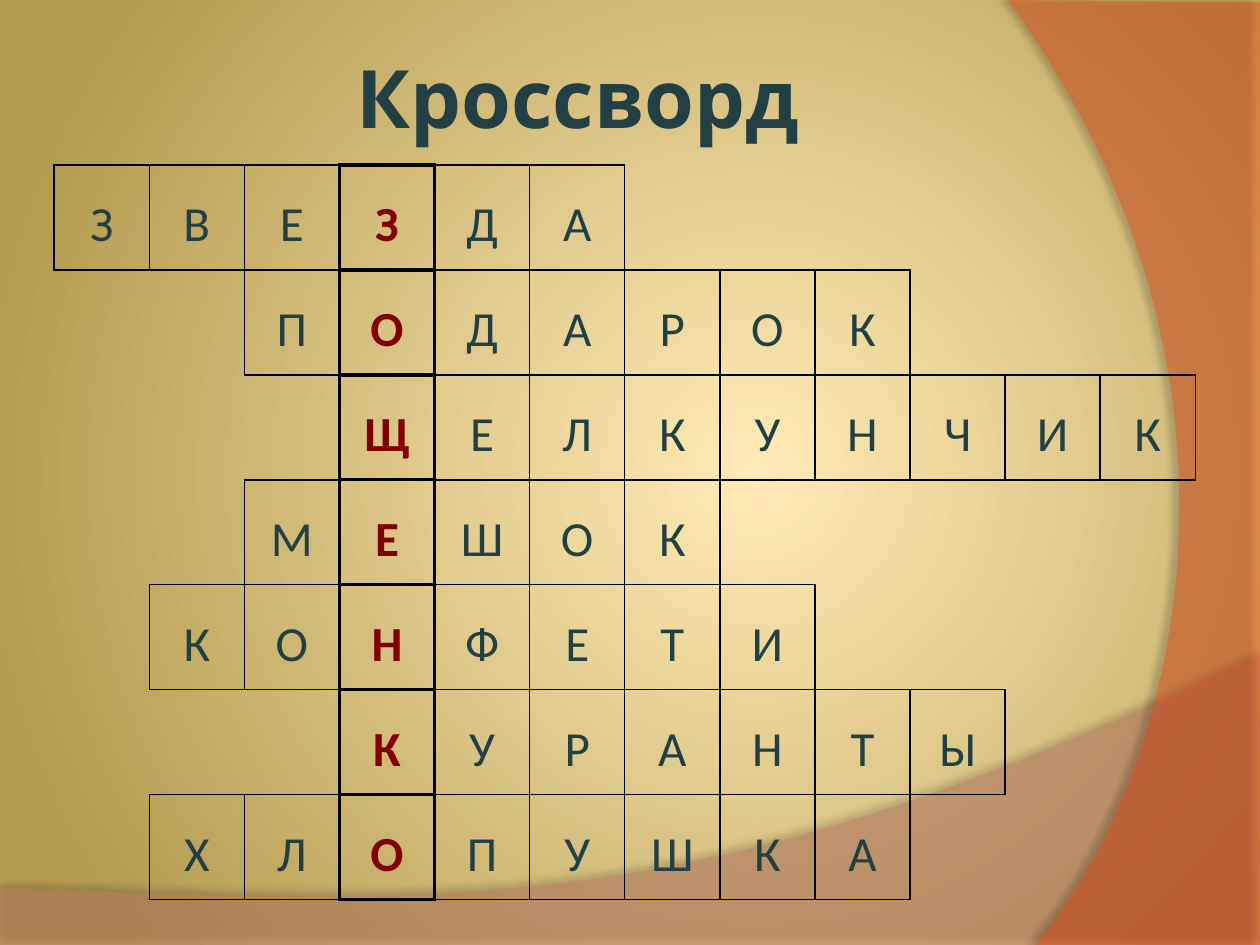
from lxml import etree
from pptx import Presentation
from pptx.dml.color import RGBColor
from pptx.enum.text import MSO_ANCHOR, PP_ALIGN
from pptx.oxml.ns import qn
from pptx.util import Inches, Pt

MIDDLE, TOP = MSO_ANCHOR.MIDDLE, MSO_ANCHOR.TOP
CENTER = PP_ALIGN.CENTER

INK = RGBColor(0x22, 0x40, 0x43)
KEY_RED = RGBColor(0x80, 0x00, 0x00)
BLACK = RGBColor(0x00, 0x00, 0x00)
CREAM = RGBColor(0xFF, 0xEB, 0xB6)
OCHRE = RGBColor(0xB3, 0x9A, 0x4F)
CLAY = RGBColor(0xC7, 0x7E, 0x69)
ORANGE = RGBColor(0xF4, 0x48, 0x0F)

TITLE = "Кроссворд"
# Each word with the index of its letter in the key column
WORDS = [("ЗВЕЗДА", 3), ("ПОДАРОК", 1), ("ЩЕЛКУНЧИК", 0), ("МЕШОК", 1),
         ("КОНФЕТИ", 2), ("КУРАНТЫ", 0), ("ХЛОПУШКА", 2)]
KEY_COLUMN, COLUMNS = 3, 12
GRID = (0.43, 1.31, 9.06, 5.83)
THIN, THICK = 1, 2.25
SIDES = [("lnL", 0, -1), ("lnR", 0, 1), ("lnT", -1, 0), ("lnB", 1, 0)]

# Outline steps: a point is a line, four points are a Bezier curve
BANDS = [
    dict(color=CLAY, alpha=45, shadow=(35, 4, 3.5, 270),
         steps=[(0, 7.05), (0, 7.5), (10, 7.5),
                ((10, 5.2), (5.59, 7.29), (3.91, 7.19), (0, 7.05))]),
    dict(color=ORANGE, alpha=40, shadow=(45, 4, 4, 180),
         steps=[(10, 0.02), (10, 7.5),
                ((8.21, 7.5), (9.35, 6.19), (10.18, 3), (8, 0))]),
]


def add_child(parent, tag, **attributes):
    return etree.SubElement(parent, qn(tag), {k: str(v) for k, v in attributes.items()})


def write(frame, text, size, font, color=INK, bold=False, spacing=None):
    para = frame.paragraphs[0]
    para.alignment = CENTER
    if spacing:
        para.line_spacing = spacing
    span = para.add_run()
    span.text = text
    span.font.size, span.font.name, span.font.bold = Pt(size), font, bold
    span.font.color.rgb = color


def paint_background(page):
    fill = page.background.fill
    fill.gradient()
    for stop, color in zip(fill.gradient_stops, (CREAM, OCHRE)):
        stop.color.rgb = color
    gradient = page._element.find(".//" + qn("a:gradFill"))
    gradient.remove(gradient.find(qn("a:lin")))
    circle = add_child(gradient, "a:path", path="circle")
    add_child(circle, "a:fillToRect", l=60000, t=50000, r=40000, b=50000)


def outline_points(steps, pieces=40):
    """Turn the steps into points, sampling each Bezier curve."""
    points = []
    for step in steps:
        if not isinstance(step[0], tuple):
            points.append(step)
            continue
        for i in range(pieces + 1):
            t = i / pieces
            weights = ((1 - t) ** 3, 3 * t * (1 - t) ** 2, 3 * t * t * (1 - t), t ** 3)
            points.append(tuple(sum(w * p[axis] for w, p in zip(weights, step))
                                for axis in (0, 1)))
    return [(Inches(x), Inches(y)) for x, y in points]


def add_band(page, color, alpha, shadow, steps):
    start, *rest = outline_points(steps)
    builder = page.shapes.build_freeform(*start)
    builder.add_line_segments(rest, close=True)
    band = builder.convert_to_shape()
    band.fill.solid()
    band.fill.fore_color.rgb = color
    band.line.fill.background()
    properties = band._element.spPr
    add_child(properties.find(qn("a:solidFill"))[0], "a:alpha", val=alpha * 1000)
    opacity, blur, distance, angle = shadow
    effects = add_child(properties, "a:effectLst")
    outer = add_child(effects, "a:outerShdw", blurRad=Pt(blur), dist=Pt(distance),
                      dir=angle * 60000, algn="ctr", rotWithShape=0)
    shade = add_child(outer, "a:srgbClr", val=BLACK)
    add_child(shade, "a:alpha", val=opacity * 1000)
    return band


def set_border(cell, side, width):
    properties = cell._tc.get_or_add_tcPr()
    line = add_child(properties, "a:" + side, w=Pt(width))
    if width:
        add_child(add_child(line, "a:solidFill"), "a:srgbClr", val=BLACK)
    else:
        add_child(line, "a:noFill")


def add_crossword(page):
    letters = {(row, KEY_COLUMN - key + i): letter
               for row, (word, key) in enumerate(WORDS)
               for i, letter in enumerate(word)}

    def weight(place):
        if place not in letters:
            return 0
        return THICK if place[1] == KEY_COLUMN else THIN

    left, top, width, height = map(Inches, GRID)
    table = page.shapes.add_table(len(WORDS), COLUMNS, left, top, width, height).table
    table.first_row = table.horz_banding = False
    for row in range(len(WORDS)):
        for column in range(COLUMNS):
            cell, place = table.cell(row, column), (row, column)
            cell.margin_left = cell.margin_right = Inches(0.07)
            cell.margin_top = cell.margin_bottom = 0
            cell.vertical_anchor = TOP
            for side, down, across in SIDES:
                neighbour = (row + down, column + across)
                set_border(cell, side, max(weight(place), weight(neighbour)))
            cell.fill.background()
            if place in letters:
                is_key = column == KEY_COLUMN
                write(cell.text_frame, letters[place], 28, "Calibri",
                      color=KEY_RED if is_key else INK, bold=is_key, spacing=1.5)


def main():
    deck = Presentation()
    deck.slide_width, deck.slide_height = Inches(10), Inches(7.5)
    page = deck.slides.add_slide(deck.slide_layouts[5])
    paint_background(page)

    title = page.shapes.title
    for band in BANDS:
        title._element.addprevious(add_band(page, **band)._element)

    title.left, title.top = Inches(0.5), Inches(0.3)
    title.width, title.height = Inches(8.17), Inches(0.93)
    frame = title.text_frame
    frame.vertical_anchor = MIDDLE
    frame.margin_left = frame.margin_right = Inches(0.05)
    frame.margin_top = frame.margin_bottom = Inches(0.05)
    write(frame, TITLE, 46, "Karla", bold=True)

    add_crossword(page)
    deck.save("out.pptx")


if __name__ == "__main__":
    main()
